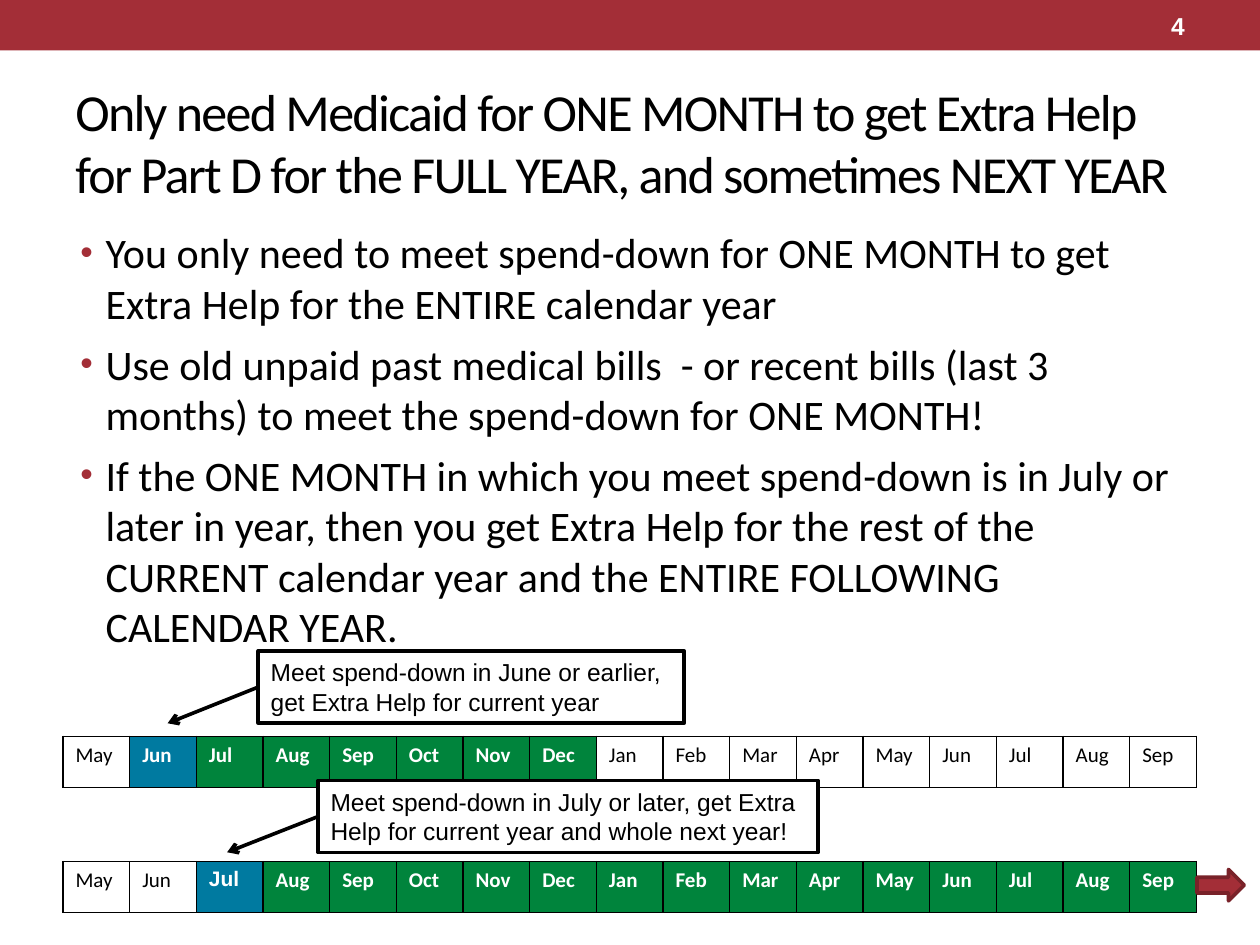
from pptx import Presentation
from pptx.dml.color import RGBColor
from pptx.enum.shapes import MSO_CONNECTOR as CONNECTOR, MSO_SHAPE as SHAPE
from pptx.enum.text import MSO_ANCHOR as ANCHOR, PP_ALIGN as ALIGN
from pptx.oxml.ns import qn
from pptx.util import Pt
from lxml.etree import SubElement

COLORS = {
    "red": "A32E37", "dark red": "792229", "blue": "007AA0",
    "green": "00843C", "black": "000000", "white": "FFFFFF",
}
LINE_WIDTH = Pt(2.08)


def color(name):
    return RGBColor.from_string(COLORS[name])


def write(frame, text, size=12, font="Calibri", ink="black", bold=False,
          align=ALIGN.LEFT, anchor=ANCHOR.TOP, spacing=0, bullet=None, after=0):
    """Fill a text frame, one paragraph for each line of text."""
    frame.word_wrap = True
    frame.vertical_anchor = anchor
    for index, line in enumerate(text.split("\n")):
        paragraph = frame.add_paragraph() if index else frame.paragraphs[0]
        paragraph.alignment = align
        paragraph.space_after = Pt(after)
        if bullet:
            properties = paragraph._p.get_or_add_pPr()
            properties.set("marL", str(Pt(17.28)))
            properties.set("indent", str(-Pt(14.4)))
            bullet_color = SubElement(properties, qn("a:buClr"))
            SubElement(bullet_color, qn("a:srgbClr"), val=COLORS["red"])
            SubElement(properties, qn("a:buSzPct"), val="85000")
            SubElement(properties, qn("a:buFont"), typeface="Arial")
            SubElement(properties, qn("a:buChar"), char=bullet)
        run = paragraph.add_run()
        run.text = line
        run.font.size = Pt(size)
        run.font.name = font
        run.font.bold = bold
        run.font.color.rgb = color(ink)
        if spacing:
            run.font._element.set("spc", str(int(spacing * 100)))


presentation = Presentation()
presentation.slide_width, presentation.slide_height = Pt(720), Pt(540)
slide = presentation.slides.add_slide(presentation.slide_layouts[6])
shapes = slide.shapes

# Top band and slide number
band = shapes.add_shape(SHAPE.RECTANGLE, 0, 0, Pt(720), Pt(28.8))
band.shadow.inherit = False
band.fill.solid()
band.fill.fore_color.rgb = color("red")
band.line.fill.background()
number = shapes.add_textbox(Pt(600), Pt(1.5), Pt(84), Pt(26))
write(number.text_frame, "4", size=14, font="Arial", ink="white", bold=True,
      align=ALIGN.RIGHT, anchor=ANCHOR.MIDDLE)

# Title and bullets
title = shapes.add_textbox(Pt(36), Pt(42), Pt(648), Pt(78))
write(title.text_frame,
      "Only need Medicaid for ONE MONTH to get Extra Help for Part D "
      "for the FULL YEAR, and sometimes NEXT YEAR",
      size=29.7, anchor=ANCHOR.MIDDLE, spacing=-1)
body = shapes.add_textbox(Pt(36), Pt(126), Pt(648), Pt(384))
write(body.text_frame,
      "You only need to meet spend-down for ONE MONTH to get Extra Help "
      "for the ENTIRE calendar year\n"
      "Use old unpaid past medical bills  - or recent bills (last 3 months) "
      "to meet the spend-down for ONE MONTH!\n"
      "If the ONE MONTH in which you meet spend-down is in July or later in "
      "year, then you get Extra Help for the rest of the CURRENT calendar year "
      "and the ENTIRE FOLLOWING CALENDAR YEAR.",
      size=24, bullet="•", after=6)

# Month timelines: top, column of the spend-down month, last covered column, its font
months = "May Jun Jul Aug Sep Oct Nov Dec Jan Feb Mar Apr May Jun Jul Aug Sep".split()
timelines = [(420.8, 1, 7, "Calibri"), (492.3, 2, 16, "Arial")]
for top, met, last, met_font in timelines:
    table = shapes.add_table(1, len(months), Pt(36), Pt(top), Pt(648), Pt(29.2)).table
    for index, month in enumerate(months):
        table.columns[index].width = Pt(648 / len(months))
        cell = table.cell(0, index)
        cell_properties = cell._tc.get_or_add_tcPr()
        for side in ("lnL", "lnR", "lnT", "lnB"):
            border = SubElement(cell_properties, qn(f"a:{side}"), w=str(Pt(1)))
            border_fill = SubElement(border, qn("a:solidFill"))
            SubElement(border_fill, qn("a:srgbClr"), val=COLORS["black"])
        covered = met <= index <= last
        cell.fill.solid()
        cell.fill.fore_color.rgb = color(
            "blue" if index == met else "green" if covered else "white")
        write(cell.text_frame, month, bold=covered,
              ink="white" if covered else "black",
              font=met_font if index == met else "Calibri")

# Callouts, each with an arrow to its spend-down month
callouts = [
    (147.6, 372, 243.4, (95.8, 413.3),
     "Meet spend-down in June or earlier, get Extra Help for current year"),
    (181.8, 446, 285.8, (129.8, 487),
     "Meet spend-down in July or later, get Extra Help for current year "
     "and whole next year!"),
]
for left, top, width, (tip_x, tip_y), text in callouts:
    callout = shapes.add_shape(SHAPE.RECTANGLE, Pt(left), Pt(top), Pt(width), Pt(41.2))
    callout.shadow.inherit = False
    callout.fill.solid()
    callout.fill.fore_color.rgb = color("white")
    callout.line.color.rgb = color("black")
    callout.line.width = LINE_WIDTH
    write(callout.text_frame, text, size=14, font="Arial")

    pointer = shapes.add_connector(
        CONNECTOR.STRAIGHT, Pt(left), Pt(top + 20.6), Pt(tip_x), Pt(tip_y))
    pointer.begin_connect(callout, 1)
    pointer.line.color.rgb = color("black")
    pointer.line.width = LINE_WIDTH
    SubElement(pointer.line._get_or_add_ln(), qn("a:tailEnd"), type="arrow")
    SubElement(pointer._element.spPr, qn("a:effectLst"))

# Arrow past the end of the second timeline
onward = shapes.add_shape(SHAPE.RIGHT_ARROW, Pt(684), Pt(496.8), Pt(27), Pt(18))
onward.shadow.inherit = False
onward.fill.solid()
onward.fill.fore_color.rgb = color("red")
onward.line.color.rgb = color("dark red")
onward.line.width = LINE_WIDTH

presentation.save("out.pptx")
